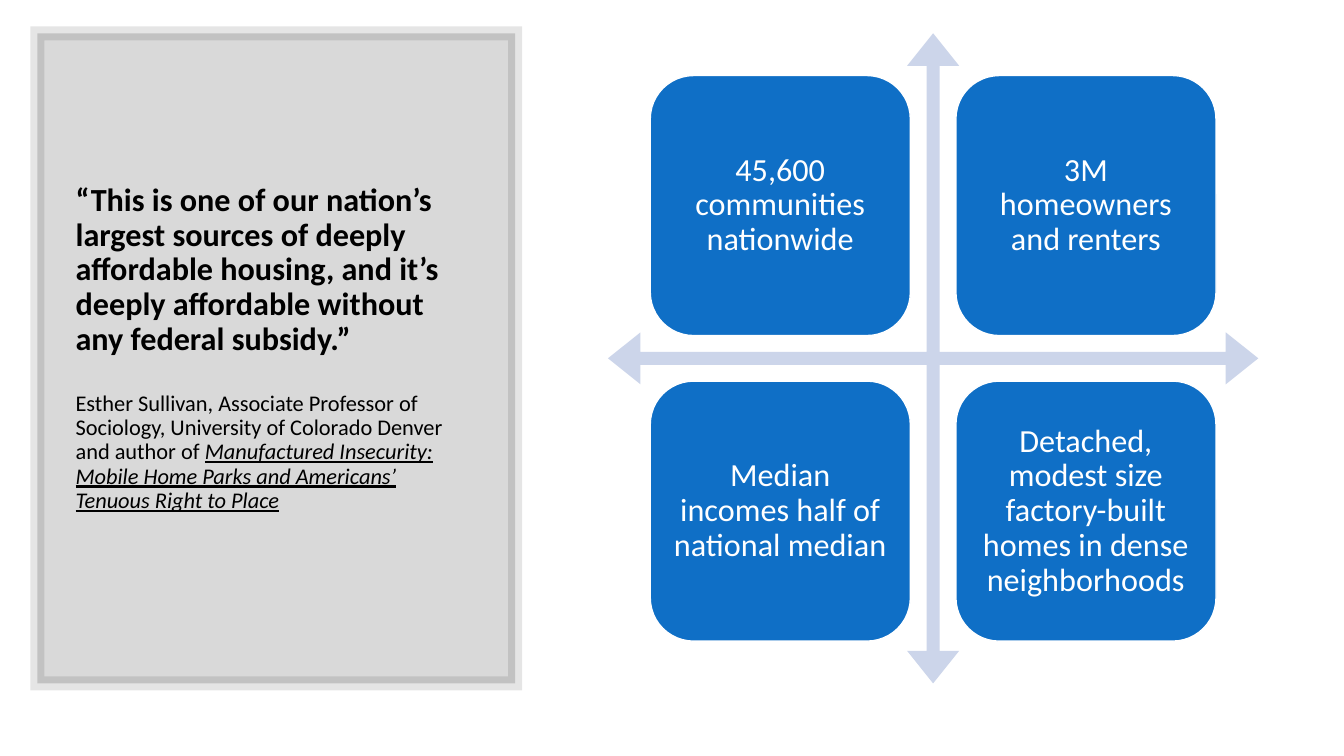
import pptx
import pptx.dml.color
import pptx.enum.shapes
import pptx.enum.text
import pptx.oxml.ns
import pptx.util
from lxml import etree

Inches = pptx.util.Inches
Pt = pptx.util.Pt
SHAPES = pptx.enum.shapes.MSO_SHAPE
ALIGN = pptx.enum.text.PP_ALIGN
MIDDLE = pptx.enum.text.MSO_ANCHOR.MIDDLE

COLORS = {"ink": "000000", "paper": "FFFFFF", "card": "0F6FC6", "arrow": "CCD5EA"}
FACTS = [
    ["45,600 communities nationwide", "3M homeowners and renters"],
    [
        "Median incomes half of national median",
        "Detached, modest size factory-built homes in dense neighborhoods",
    ],
]
QUOTE = (
    "“This is one of our nation’s largest sources of deeply affordable housing, "
    "and it’s deeply affordable without any federal subsidy.”"
)
AUTHOR = (
    "Esther Sullivan, Associate Professor of Sociology, "
    "University of Colorado Denver and author of "
)
BOOK = "Manufactured Insecurity: Mobile Home Parks and Americans’ Tenuous Right to Place"

MARGIN_TOP = 0.33
FIELD = 6.45  # height of the panel, side of the arrow cross
FIELD_LEFT = 6.03
CARD = 0.4 * FIELD
CARD_INSET = 0.065 * FIELD
CARD_PITCH = FIELD - 2 * CARD_INSET - CARD


def add_filled(kind, left, top, width, height, color):
    shape = slide.shapes.add_shape(
        kind, Inches(left), Inches(top), Inches(width), Inches(height)
    )
    shape.shadow.inherit = False
    shape.fill.solid()
    shape.fill.fore_color.rgb = pptx.dml.color.RGBColor.from_string(COLORS[color])
    shape.line.fill.background()
    return shape


def format_font(font, size, color, bold=False):
    font.name = "Calibri"
    font.size = Pt(size)
    font.bold = bold
    font.color.rgb = pptx.dml.color.RGBColor.from_string(COLORS[color])


presentation = pptx.Presentation()
presentation.slide_width = Inches(13.33)
presentation.slide_height = Inches(7.5)
slide = presentation.slides.add_slide(presentation.slide_layouts[5])

# Quote panel: translucent fill and border
panel = add_filled(SHAPES.RECTANGLE, 0.37, MARGIN_TOP, 4.74, FIELD, "ink")
panel.line.width = Pt(10)
panel.line.color.rgb = pptx.dml.color.RGBColor.from_string(COLORS["ink"])
colors = panel.element.spPr.iter(pptx.oxml.ns.qn("a:srgbClr"))
for color, opacity in zip(colors, (15, 10)):
    alpha = etree.SubElement(color, pptx.oxml.ns.qn("a:alpha"))
    alpha.set("val", str(opacity * 1000))
line = panel.line._get_or_add_ln()
etree.SubElement(line, pptx.oxml.ns.qn("a:miter")).set("lim", "800000")

# Quote and its author
title = slide.shapes.title
title.left, title.top = Inches(0.65), Inches(0.7)
title.width, title.height = Inches(4.16), Inches(5.75)
slide.shapes._spTree.append(title.element)
frame = title.text_frame
frame.text = QUOTE
frame.word_wrap = True
frame.auto_size = pptx.enum.text.MSO_AUTO_SIZE.NONE
frame.vertical_anchor = MIDDLE
frame.margin_bottom = Inches(0.29)
quote = frame.paragraphs[0]
quote.space_after = Pt(25)
format_font(quote.runs[0].font, 23, "ink", bold=True)
author = frame.add_paragraph()
author.text = AUTHOR
book = author.add_run()
book.text = BOOK
for run in author.runs:
    format_font(run.font, 16, "ink")
book.font.italic = True
book.font.underline = True
for paragraph in frame.paragraphs:
    paragraph.alignment = ALIGN.LEFT
    paragraph.line_spacing = 0.9

# Arrow cross with one fact card in each quadrant
cross = add_filled(SHAPES.QUAD_ARROW, FIELD_LEFT, MARGIN_TOP, FIELD, FIELD, "arrow")
for index, share in enumerate((0.02, 0.04, 0.05)):
    cross.adjustments[index] = share

for row, facts in enumerate(FACTS):
    for column, fact in enumerate(facts):
        card = add_filled(
            SHAPES.ROUNDED_RECTANGLE,
            FIELD_LEFT + CARD_INSET + column * CARD_PITCH,
            MARGIN_TOP + CARD_INSET + row * CARD_PITCH,
            CARD,
            CARD,
            "card",
        )
        card.line.width = Pt(1)
        card.line.color.rgb = pptx.dml.color.RGBColor.from_string(COLORS["paper"])
        frame = card.text_frame
        frame.text = fact
        frame.word_wrap = True
        frame.vertical_anchor = MIDDLE
        frame.margin_left = frame.margin_right = Inches(0.1)
        frame.margin_top = frame.margin_bottom = Inches(0.1)
        paragraph = frame.paragraphs[0]
        paragraph.alignment = ALIGN.CENTER
        paragraph.line_spacing = 0.9
        format_font(paragraph.runs[0].font, 23, "paper")

presentation.save("out.pptx")
